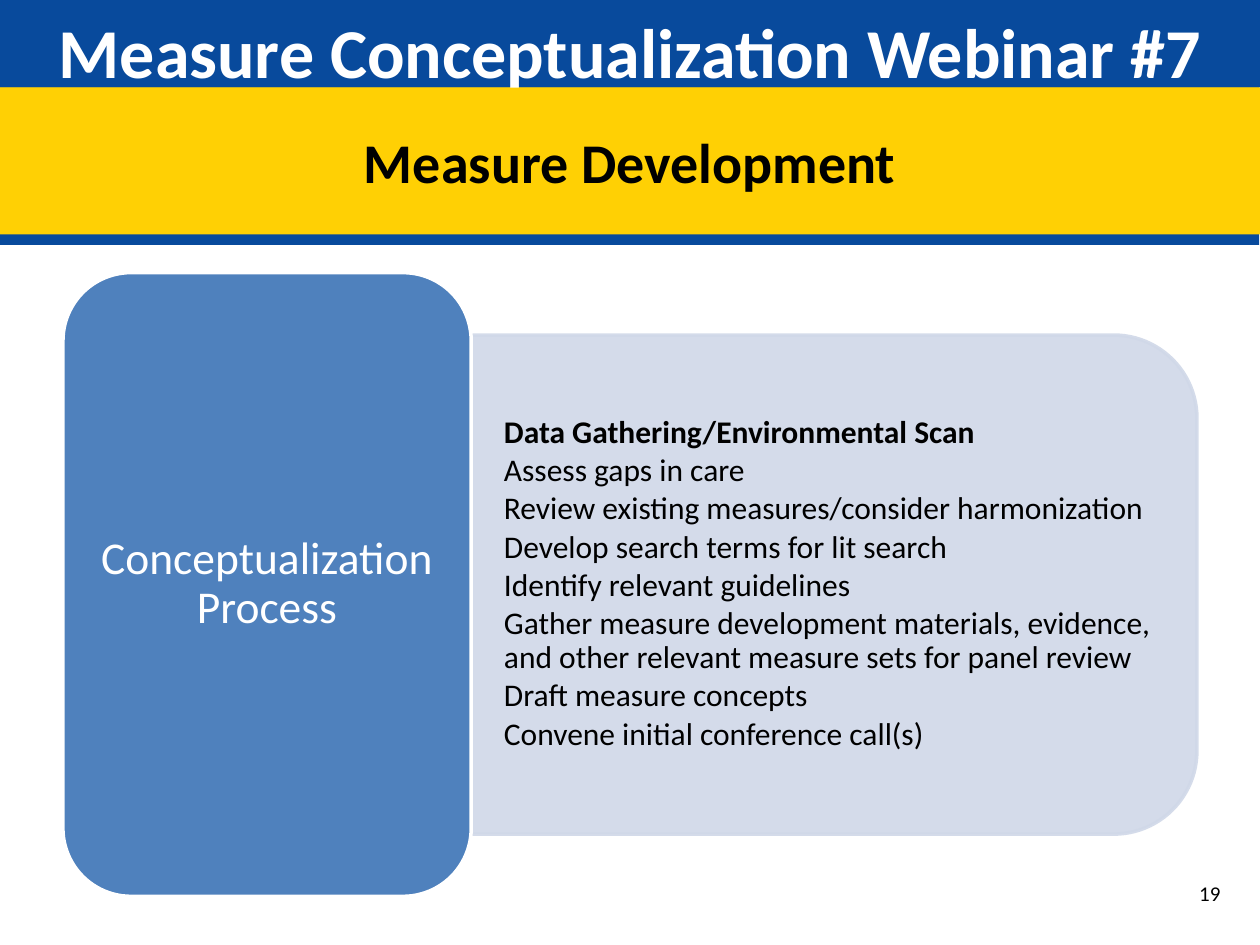
from dataclasses import dataclass

from lxml import etree
from pptx import Presentation
from pptx.dml.color import RGBColor
from pptx.enum.shapes import MSO_SHAPE as SHAPE
from pptx.enum.text import MSO_ANCHOR as ANCHOR, MSO_AUTO_SIZE as AUTO, PP_ALIGN as ALIGN
from pptx.oxml.ns import qn
from pptx.util import Pt


@dataclass(frozen=True)
class Theme:
    font: str = "Calibri"
    blue: str = "084A9C"
    yellow: str = "FFD004"
    stage: str = "4F81BD"
    panel: str = "D0D8E8"
    white: str = "FFFFFF"
    black: str = "000000"
    title_size: int = 40
    band_size: int = 32
    stage_size: int = 26
    body_size: int = 18
    number_size: int = 12


THEME = Theme()

STEPS = [
    "Data Gathering/Environmental Scan",
    "Assess gaps in care",
    "Review existing measures/consider harmonization",
    "Develop search terms for lit search",
    "Identify relevant guidelines",
    "Gather measure development materials, evidence, and other relevant measure sets for panel review",
    "Draft measure concepts",
    "Convene initial conference call(s)",
]


def place(sp, box):
    sp.left, sp.top, sp.width, sp.height = (Pt(v) for v in box)


def paint(sp, fill, line=None):
    sp.fill.solid()
    sp.fill.fore_color.rgb = RGBColor.from_string(fill)
    if line:
        sp.line.color.rgb = RGBColor.from_string(line)
        sp.line.width = Pt(2)
    else:
        sp.line.fill.background()


def add_shape(slide, kind, box, fill, line=None):
    sp = slide.shapes.add_shape(kind, *(Pt(v) for v in box))
    sp.shadow.inherit = False
    paint(sp, fill, line)
    return sp


def add_edge(sp, color):
    sp.shadow.inherit = False
    effects = sp._element.spPr.find(qn("a:effectLst"))
    shadow = etree.SubElement(effects, qn("a:outerShdw"), blurRad="0", dist=str(Pt(6)),
                              dir=str(94 * 60000), algn="t", rotWithShape="0")
    etree.SubElement(shadow, qn("a:srgbClr"), val=color)


def set_opacity(sp, percent):
    for color in sp._element.spPr.iter(qn("a:srgbClr")):
        etree.SubElement(color, qn("a:alpha"), val=str(percent * 1000))


def write(sp, lines, size, color, align=ALIGN.CENTER, anchor=ANCHOR.MIDDLE,
          insets=(7.2, 3.6, 7.2, 3.6), bold=False, spacing=1.0, after=0):
    tf = sp.text_frame
    tf.text = "\n".join(lines)
    tf.word_wrap = True
    tf.auto_size = AUTO.NONE
    tf.vertical_anchor = anchor
    tf.margin_left, tf.margin_top, tf.margin_right, tf.margin_bottom = (Pt(v) for v in insets)
    for p in tf.paragraphs:
        p.alignment = align
        p.line_spacing = spacing
        p.space_before = Pt(0)
        p.space_after = Pt(after)
        for r in p.runs:
            r.font.name = THEME.font
            r.font.size = Pt(size)
            r.font.bold = bold
            r.font.color.rgb = RGBColor.from_string(color)
    return tf


def add_text(slide, box, lines, size, color, **style):
    sp = slide.shapes.add_textbox(*(Pt(v) for v in box))
    return write(sp, lines, size, color, **style)


def add_header(slide):
    title = slide.shapes.title
    place(title, (0, 0, 720, 50))
    paint(title, THEME.blue)
    add_edge(title, THEME.yellow)
    write(title, ["Measure Conceptualization Webinar #7"], THEME.title_size, THEME.white,
          anchor=ANCHOR.TOP, insets=(7.2, 5, 7.2, 0), bold=True)

    band = add_shape(slide, SHAPE.RECTANGLE, (0, 50, 720, 84), THEME.yellow)
    add_edge(band, THEME.blue)
    write(band, ["Measure Development"], THEME.band_size, THEME.black, bold=True)


def add_process(slide):
    panel = add_shape(slide, SHAPE.ROUND_2_SAME_RECTANGLE, (334, 126.7, 285.2, 414.7),
                      THEME.panel, THEME.panel)
    panel.rotation = 90
    set_opacity(panel, 90)

    tf = add_text(slide, (269.3, 205.2, 401, 257), STEPS, THEME.body_size, THEME.black,
                  align=ALIGN.LEFT, insets=(18.7, 2.9, 5, 2.9), spacing=0.9, after=2.4)
    tf.paragraphs[0].runs[0].font.bold = True

    stage = add_shape(slide, SHAPE.ROUNDED_RECTANGLE, (36, 155.8, 233.3, 356.4),
                      THEME.stage, THEME.white)
    write(stage, ["Conceptualization Process"], THEME.stage_size, THEME.white, spacing=0.9, after=9)


def main():
    prs = Presentation()
    prs.slide_width, prs.slide_height = Pt(720), Pt(540)
    slide = prs.slides.add_slide(prs.slide_layouts[5])
    add_header(slide)
    add_process(slide)
    add_text(slide, (678.2, 499.7, 36, 21.8), ["19"], THEME.number_size, THEME.black,
             align=ALIGN.LEFT, anchor=ANCHOR.TOP)
    prs.save("out.pptx")


if __name__ == "__main__":
    main()
